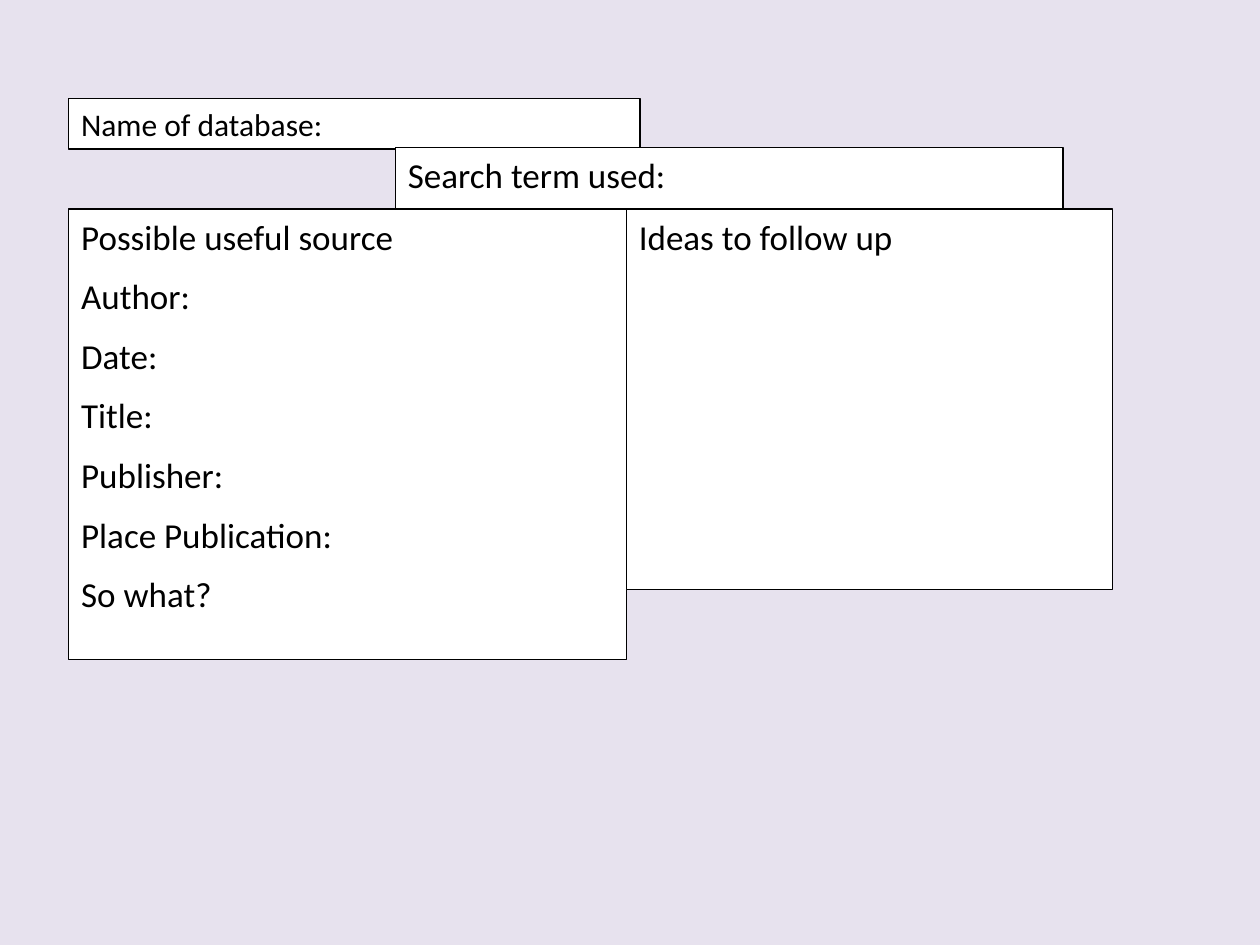
from pptx import Presentation
from pptx.dml.color import RGBColor
from pptx.enum.shapes import MSO_SHAPE as Shape
from pptx.enum.text import MSO_ANCHOR as Anchor, PP_ALIGN as Align
from pptx.util import Pt

COLOURS = {"background": "E7E2EE", "box": "FFFFFF", "ink": "000000"}


class Worksheet:
    font_name = "Calibri"
    line_width = 0.75
    space_after = 10

    def __init__(self, slide):
        self.slide = slide

    def colour(self, name):
        return RGBColor.from_string(COLOURS[name])

    def background(self):
        fill = self.slide.background.fill
        fill.solid()
        fill.fore_color.rgb = self.colour("background")

    def box(self, left, top, width, height, lines, size=20):
        shape = self.slide.shapes.add_shape(
            Shape.RECTANGLE, Pt(left), Pt(top), Pt(width), Pt(height))
        shape.shadow.inherit = False
        shape.fill.solid()
        shape.fill.fore_color.rgb = self.colour("box")
        shape.line.color.rgb = self.colour("ink")
        shape.line.width = Pt(self.line_width)
        frame = shape.text_frame
        frame.word_wrap = True
        frame.vertical_anchor = Anchor.TOP
        frame.text = "\n".join(lines)
        for paragraph in frame.paragraphs:
            paragraph.alignment = Align.LEFT
            paragraph.space_after = Pt(self.space_after)
            paragraph.font.name = self.font_name
            paragraph.font.size = Pt(size)
            paragraph.font.color.rgb = self.colour("ink")


def main():
    presentation = Presentation()
    presentation.slide_width, presentation.slide_height = Pt(720), Pt(540)
    slide = presentation.slides.add_slide(presentation.slide_layouts[6])
    worksheet = Worksheet(slide)
    left, columns_top, source_width = 39.3, 119.5, 318.7

    worksheet.background()
    worksheet.box(left, 56.2, 326.5, 29, ["Name of database:"], size=18)
    worksheet.box(226, 84.3, 381.4, 35.2, ["Search term used:"])
    worksheet.box(left, columns_top, source_width, 257.2, [
        "Possible useful source", "Author:", "Date:", "Title:",
        "Publisher:", "Place Publication:", "So what?"])
    worksheet.box(left + source_width, columns_top, 277.8, 217.6,
                  ["Ideas to follow up"])
    presentation.save("out.pptx")


if __name__ == "__main__":
    main()
